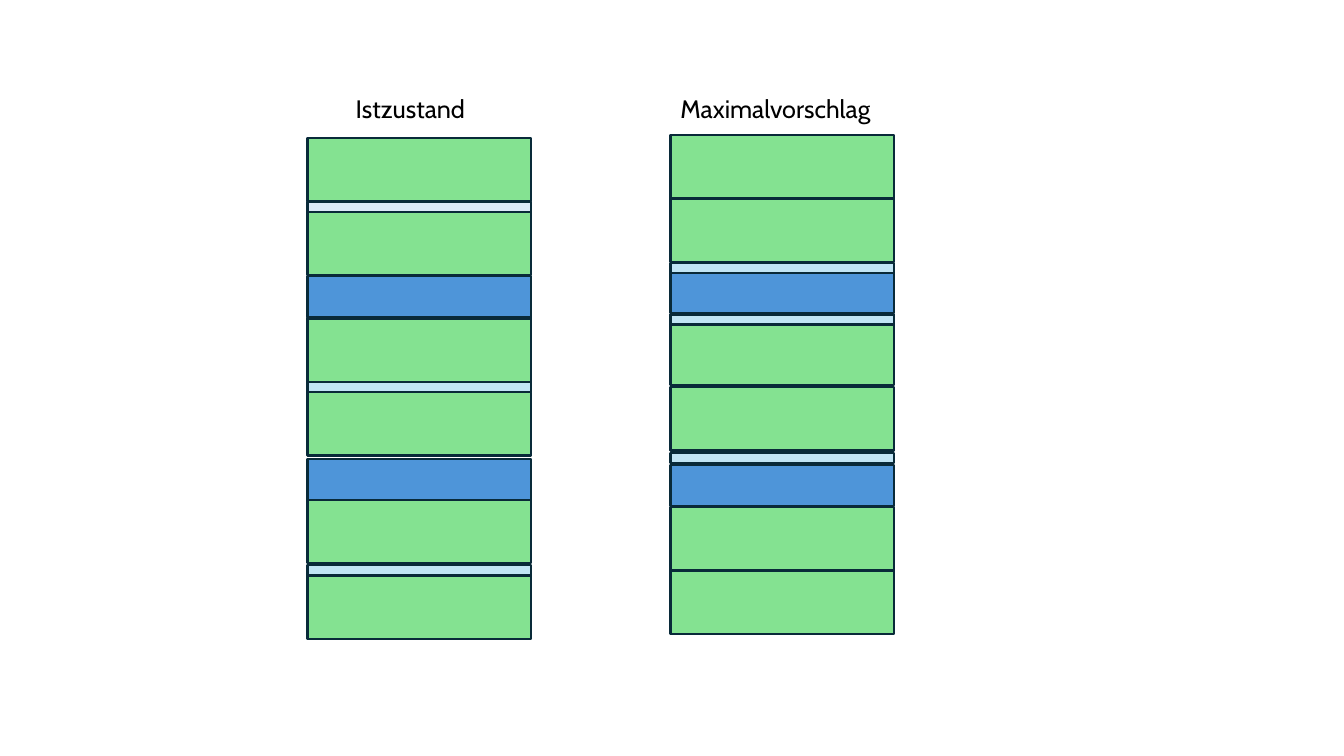
from pptx import Presentation
from pptx.dml.color import RGBColor
from pptx.enum.shapes import MSO_SHAPE
from pptx.util import Inches, Pt

GREEN, BLUE, LIGHT_BLUE, PALE_BLUE = "84E291", "4E95D9", "C1E5F5", "DCEAF7"
OUTLINE, BLACK = "092A39", "000000"
STRIP_WIDTH = 2.22
STRIP_HEIGHTS = {GREEN: 0.63, BLUE: 0.41, LIGHT_BLUE: 0.1, PALE_BLUE: 0.1}

# Heading, heading left, heading width, column left, strip tops by colour (back to front)
COLUMNS = [
    ("Istzustand", 3.43, 2.33, 3.05, {
        GREEN: [1.37, 2.1, 3.16, 3.89, 4.96, 5.71],
        PALE_BLUE: [2],
        BLUE: [2.74, 4.55],
        LIGHT_BLUE: [3.79, 5.61],
    }),
    ("Maximalvorschlag", 6.65, 2.22, 6.65, {
        GREEN: [1.34, 1.97, 3.19, 3.84, 5.03, 5.66],
        BLUE: [2.7, 4.61],
        LIGHT_BLUE: [2.61, 3.12, 4.49],
    }),
]


def color(hex_value):
    return RGBColor.from_string(hex_value)


presentation = Presentation()
presentation.slide_width = Inches(13.33)
presentation.slide_height = Inches(7.5)
slide = presentation.slides.add_slide(presentation.slide_layouts[6])

for heading, heading_left, heading_width, left, strips in COLUMNS:
    for fill, tops in strips.items():
        for top in tops:
            strip = slide.shapes.add_shape(
                MSO_SHAPE.RECTANGLE, Inches(left), Inches(top),
                Inches(STRIP_WIDTH), Inches(STRIP_HEIGHTS[fill]))
            strip.shadow.inherit = False
            strip.fill.solid()
            strip.fill.fore_color.rgb = color(fill)
            strip.line.color.rgb = color(OUTLINE)
            strip.line.width = Pt(1.5)

    text_box = slide.shapes.add_textbox(
        Inches(heading_left), Inches(0.88), Inches(heading_width), Inches(0.4))
    text_box.text_frame.word_wrap = True
    paragraph = text_box.text_frame.paragraphs[0]
    paragraph.text = heading
    paragraph.font.name = "Cabin"
    paragraph.font.size = Pt(18)
    paragraph.font.color.rgb = color(BLACK)

presentation.save("out.pptx")
